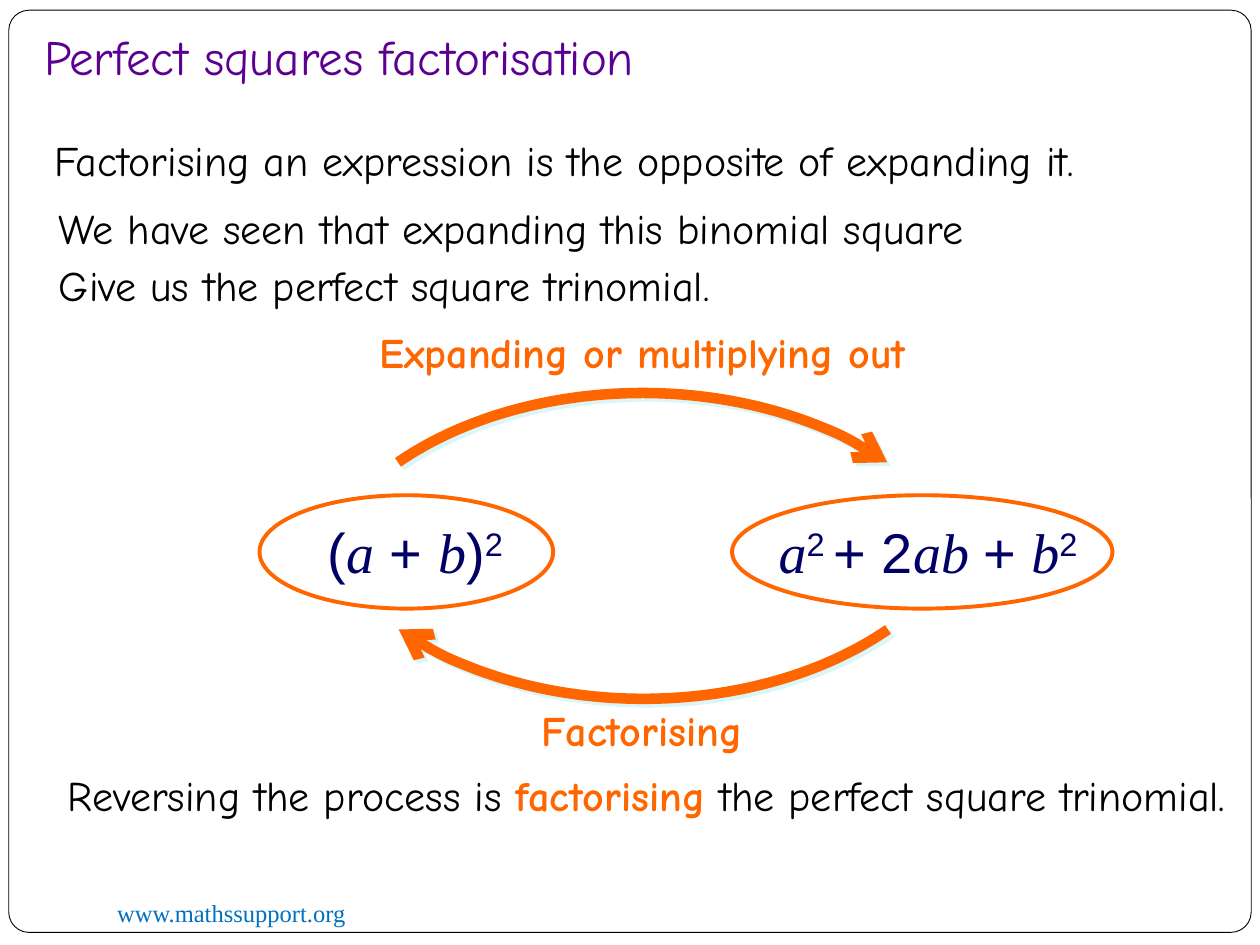
from lxml.etree import SubElement
from pptx import Presentation
from pptx.dml.color import RGBColor
from pptx.enum.shapes import MSO_SHAPE
from pptx.enum.text import MSO_ANCHOR, PP_ALIGN
from pptx.oxml.ns import qn
from pptx.util import Pt

BLACK = RGBColor(0x00, 0x00, 0x00)
PURPLE = RGBColor(0x5B, 0x00, 0x91)
NAVY = RGBColor(0x01, 0x00, 0x66)
ORANGE = RGBColor(0xFF, 0x66, 0x00)
BLUE = RGBColor(0x00, 0x70, 0xC0)
SHADOW = "DBF5F9"
HAND, SANS, SERIF = "Comic Neue", "Arial", "Times New Roman"


def add_text(left, top, width, height, spans, size, wrap=True):
    """Add a text box; each span is (text, font, colour, font attributes)."""
    box = slide.shapes.add_textbox(Pt(left), Pt(top), Pt(width), Pt(height))
    box.text_frame.word_wrap = wrap
    para = box.text_frame.paragraphs[0]
    if not wrap:
        para.alignment = PP_ALIGN.CENTER
    for text, font, colour, style in spans:
        span = para.add_run()
        span.text = text
        span.font.size = Pt(size)
        span.font.name = font
        span.font.color.rgb = colour
        span.font.bold = "bold" in style
        span.font.italic = "italic" in style
        if "super" in style:
            span.font._element.set("baseline", "30000")


def add_outline(kind, left, top, width, height, colour, weight):
    shape = slide.shapes.add_shape(kind, Pt(left), Pt(top), Pt(width), Pt(height))
    shape.shadow.inherit = False
    shape.fill.background()
    shape.line.color.rgb = colour
    shape.line.width = Pt(weight)
    return shape


deck = Presentation()
deck.slide_width, deck.slide_height = Pt(720), Pt(540)
slide = deck.slides.add_slide(deck.slide_layouts[5])

title = slide.shapes.title
title.left, title.top, title.width, title.height = Pt(18), Pt(2.9), Pt(614), Pt(53.3)
frame = title.text_frame
frame.text = "Perfect squares factorisation"
frame.vertical_anchor = MSO_ANCHOR.BOTTOM
frame.margin_bottom = Pt(7.2)
para = frame.paragraphs[0]
para.alignment = PP_ALIGN.LEFT
font = para.runs[0].font
font.name, font.size, font.color.rgb = HAND, Pt(28), PURPLE

border = add_outline(MSO_SHAPE.ROUNDED_RECTANGLE, 5, 5.8, 710, 527, BLACK, 0.5)
border.adjustments[0] = 0.022
add_text(59.8, 509.8, 234, 24.5, [("www.mathssupport.org", SERIF, BLUE, "")], 14)

# Explanatory sentences
for left, top, sentence in [
    (23.8, 73.4, "Factorising an expression is the opposite of expanding it."),
    (26.6, 112.3, "We have seen that expanding this binomial square"),
    (26.6, 144.7, "Give us the perfect square trinomial."),
]:
    add_text(left, top, 682, 36, [(sentence, HAND, BLACK, "")], 24)
add_text(31.7, 436.3, 682, 65.5, [
    ("Reversing the process is ", HAND, BLACK, ""),
    ("factorising", HAND, ORANGE, "bold"),
    (" the perfect square trinomial.", HAND, BLACK, ""),
], 24)

# Ringed expressions: letters are serif italics, the rest is sans
for ring_left, ring_width, text_left, text_width, parts in [
    (148.3, 167.8, 175.7, 123.1,
     [("(", ""), ("a", "italic"), (" + ", ""), ("b", "italic"), (")", ""), ("2", "super")]),
    (418.3, 217.4, 434.9, 190.8,
     [("a", "italic"), ("2 ", "super"), ("+ 2", ""), ("ab ", "italic"), ("+ ", ""),
      ("b", "italic"), ("2", "super")]),
]:
    spans = [(text, SERIF if style == "italic" else SANS, NAVY, style) for text, style in parts]
    add_text(text_left, 292.3, text_width, 46, spans, 32, wrap=False)
    add_outline(MSO_SHAPE.OVAL, ring_left, 283, ring_width, 64.8, ORANGE, 2.25)

# Curved arrows: clockwise elliptical arcs, over and under the expressions
RADIUS_X, RADIUS_Y, TILT = 196, 132.5, 33.6
for centre_x, centre_y, start, label, left, top, width in [
    (367.2, 357.1, 180, "Expanding or multiplying out", 194.4, 182.9, 345.6),
    (367.6, 266.8, 0, "Factorising", 295.9, 398.9, 141.8),
]:
    arrow = add_outline(MSO_SHAPE.ARC, centre_x - RADIUS_X, centre_y - RADIUS_Y,
                        2 * RADIUS_X, 2 * RADIUS_Y, ORANGE, 6)
    # Arc angles count 60000 to the degree, adjustments 100000 to the unit
    arrow.adjustments[0] = (start + TILT) * 0.6
    arrow.adjustments[1] = (start + 180 - TILT) * 0.6
    SubElement(arrow.line._get_or_add_ln(), qn("a:tailEnd"), type="arrow")
    effects = arrow._element.spPr.find(qn("a:effectLst"))
    shadow = SubElement(effects, qn("a:outerShdw"), dist="35560", dir="2700000",
                        algn="ctr", rotWithShape="0")
    SubElement(shadow, qn("a:srgbClr"), val=SHADOW)
    add_text(left, top, width, 36, [(label, HAND, ORANGE, "bold")], 24, wrap=False)

deck.save("out.pptx")
